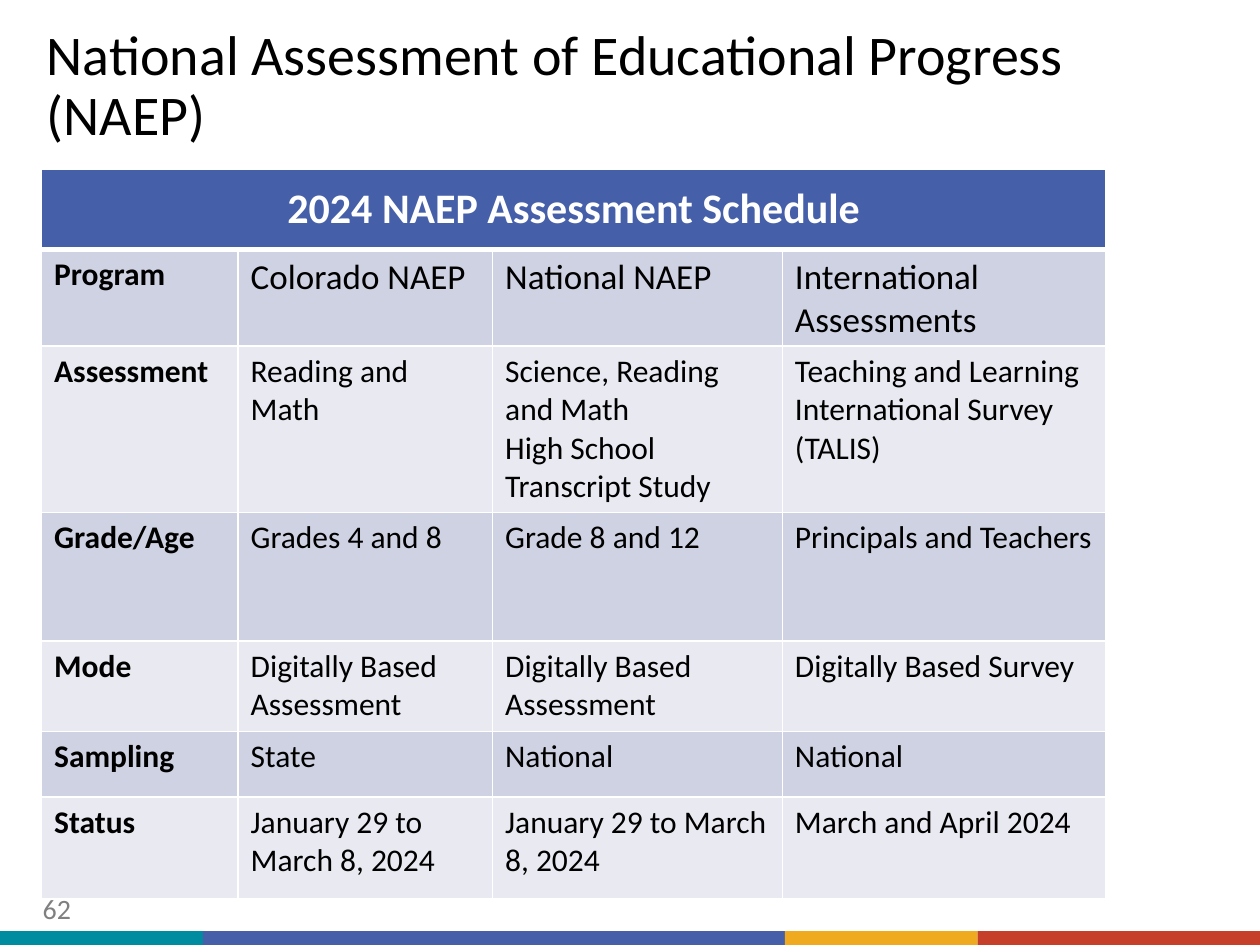
"""Build the NAEP assessment schedule slide."""
from itertools import pairwise

from lxml.etree import SubElement
from pptx import Presentation
from pptx.dml.color import RGBColor
from pptx.enum.shapes import MSO_SHAPE
from pptx.enum.text import MSO_ANCHOR, MSO_AUTO_SIZE, PP_ALIGN
from pptx.oxml.ns import qn
from pptx.util import Inches, Pt

COLORS = {
    "teal": "008CA0", "blue": "455FA9", "gold": "EFAA1F", "red": "C63F28",
    "band_dark": "CFD2E2", "band_light": "E9EAF1",
    "white": "FFFFFF", "black": "000000", "gray": "808080",
}
BAR_EDGES = [0, 1.61, 6.23, 7.76, 10]
BAR_COLORS = ["teal", "blue", "gold", "red"]
COLUMN_WIDTHS = [1.56, 2.02, 2.3, 2.57]
ROW_HEIGHTS = [0.64, 0.76, 1.32, 1.02, 0.72, 0.52, 0.81]
SCHEDULE = [
    ["Program", "Colorado NAEP", "National NAEP", "International Assessments"],
    ["Assessment", "Reading and Math",
     "Science, Reading and Math\nHigh School Transcript Study",
     "Teaching and Learning International Survey\n(TALIS)"],
    ["Grade/Age", "Grades 4 and 8", "Grade 8 and 12", "Principals and Teachers"],
    ["Mode", "Digitally Based Assessment", "Digitally Based Assessment",
     "Digitally Based Survey"],
    ["Sampling", "State", "National", "National"],
    ["Status", "January 29 to March 8, 2024", "January 29 to March 8, 2024",
     "March and April 2024"],
]


class SlideBuilder:
    """Hold the style and the current slide."""

    def __init__(self, presentation):
        self.font_name = "Calibri"
        self.slide = presentation.slides.add_slide(presentation.slide_layouts[5])

    def color(self, name):
        """Return the named colour."""
        return RGBColor.from_string(COLORS[name])

    def format_text(self, text_frame, size, color, bold=False, **paragraph_format):
        """Apply font and paragraph values to every paragraph."""
        font_format = {"name": self.font_name, "size": Pt(size), "bold": bold}
        for paragraph in text_frame.paragraphs:
            for key, value in paragraph_format.items():
                setattr(paragraph, key, value)
            for run in paragraph.runs:
                for key, value in font_format.items():
                    setattr(run.font, key, value)
                run.font.color.rgb = self.color(color)

    def bar(self, left, right, color):
        """Draw one segment of the footer bar."""
        shape = self.slide.shapes.add_shape(
            MSO_SHAPE.RECTANGLE, Inches(left), Inches(7.39),
            Inches(right - left), Inches(0.11))
        shape.shadow.inherit = False
        shape.fill.solid()
        shape.fill.fore_color.rgb = self.color(color)
        shape.line.fill.background()

    def title(self, text, left, top, width, height):
        """Fill and place the title placeholder."""
        shape = self.slide.shapes.title
        place = {"left": left, "top": top, "width": width, "height": height}
        for key, value in place.items():
            setattr(shape, key, Inches(value))
        text_frame = shape.text_frame
        text_frame.text = text
        text_frame.auto_size = MSO_AUTO_SIZE.NONE
        text_frame.vertical_anchor = MSO_ANCHOR.MIDDLE
        self.format_text(text_frame, 32, "black",
                         alignment=PP_ALIGN.LEFT, line_spacing=0.9)

    def page_number(self, text, left, top, width, height):
        """Add the page number."""
        box = self.slide.shapes.add_textbox(
            Inches(left), Inches(top), Inches(width), Inches(height))
        box.text_frame.word_wrap = True
        box.text_frame.text = text
        self.format_text(box.text_frame, 16, "gray")

    def cell(self, cell, text, fill, size, color, bold, bottom=1, **paragraph_format):
        """Fill, border and format one table cell."""
        cell.text = text
        properties = cell._tc.get_or_add_tcPr()
        for side, width in {"L": 1, "R": 1, "T": 1, "B": bottom}.items():
            line = SubElement(properties, qn(f"a:ln{side}"), w=str(Pt(width)))
            line_fill = SubElement(line, qn("a:solidFill"))
            SubElement(line_fill, qn("a:srgbClr"), val=COLORS["white"])
        cell.fill.solid()
        cell.fill.fore_color.rgb = self.color(fill)
        self.format_text(cell.text_frame, size, color, bold, **paragraph_format)

    def schedule(self, heading, rows, left, top):
        """Add the schedule table under a merged heading row."""
        table = self.slide.shapes.add_table(
            len(ROW_HEIGHTS), len(COLUMN_WIDTHS), Inches(left), Inches(top),
            Inches(sum(COLUMN_WIDTHS)), Inches(sum(ROW_HEIGHTS))).table
        for column, width in zip(table.columns, COLUMN_WIDTHS):
            column.width = Inches(width)
        for row, height in zip(table.rows, ROW_HEIGHTS):
            row.height = Inches(height)
        heading_cell = table.cell(0, 0)
        heading_cell.merge(table.cell(0, len(COLUMN_WIDTHS) - 1))
        self.cell(heading_cell, heading, "blue", 24, "white", True,
                  bottom=3, alignment=PP_ALIGN.CENTER)
        heading_cell.vertical_anchor = MSO_ANCHOR.MIDDLE
        for row_index, texts in enumerate(rows, 1):
            fill = "band_dark" if row_index % 2 else "band_light"
            for column_index, text in enumerate(texts):
                is_label = column_index == 0
                size = 20 if row_index == 1 and not is_label else 18
                self.cell(table.cell(row_index, column_index), text, fill, size,
                          "black", is_label, bottom=1)


def main():
    """Build and save the presentation."""
    presentation = Presentation()
    presentation.slide_width = Inches(10)
    presentation.slide_height = Inches(7.5)
    builder = SlideBuilder(presentation)
    for (left, right), color in zip(pairwise(BAR_EDGES), BAR_COLORS):
        builder.bar(left, right, color)
    builder.title("National Assessment of Educational Progress (NAEP)",
                  0.27, 0.28, 9.44, 0.83)
    builder.page_number("62", 0.24, 7.03, 2.25, 0.4)
    builder.schedule("2024 NAEP Assessment Schedule", SCHEDULE, 0.33, 1.34)
    presentation.save("out.pptx")


if __name__ == "__main__":
    main()
